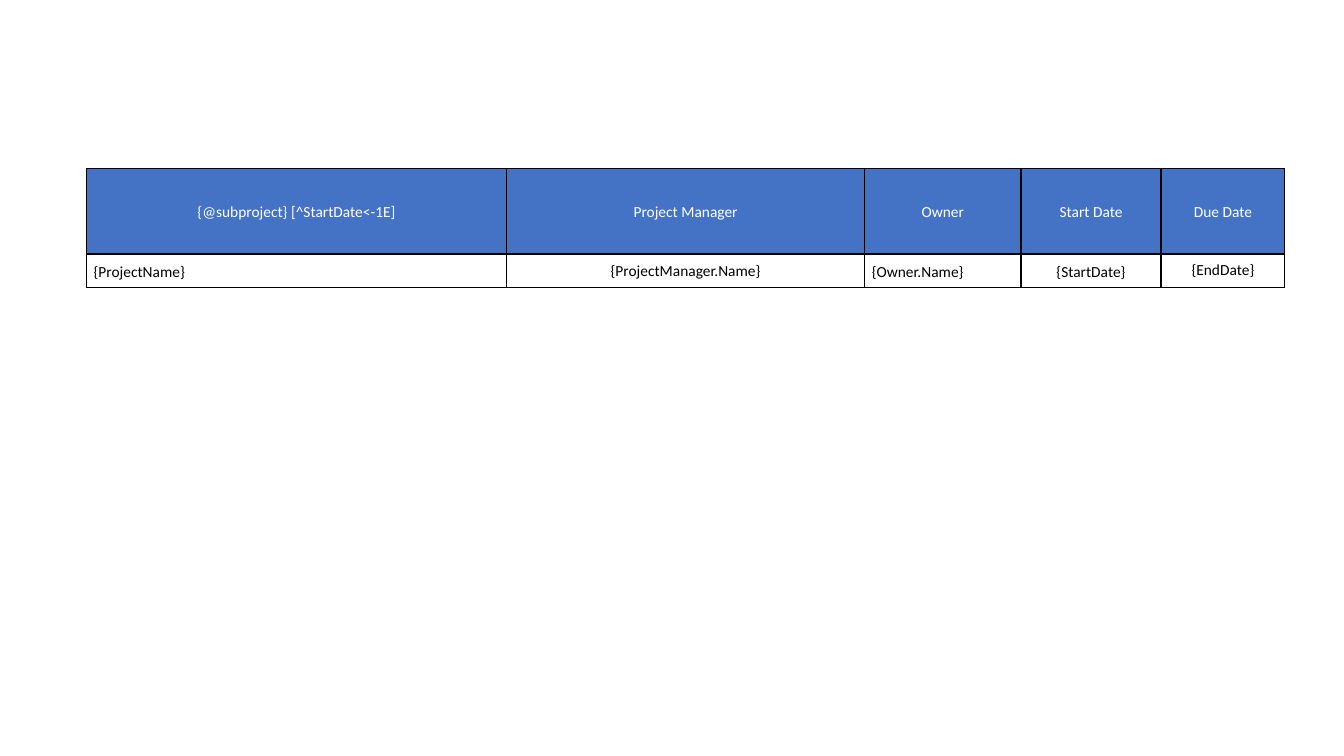
import pptx
import pptx.util
import pptx.dml.color
import pptx.enum.text
import pptx.oxml
import pptx.oxml.ns
from lxml import etree

Cm = pptx.util.Cm
Pt = pptx.util.Pt
RGB = pptx.dml.color.RGBColor
ALIGN = pptx.enum.text.PP_ALIGN
MIDDLE = pptx.enum.text.MSO_ANCHOR.MIDDLE

BLUE = RGB(0x44, 0x72, 0xC4)
WHITE = RGB(255, 255, 255)
BLACK = RGB(0, 0, 0)

LEFT, TOP = 2.18, 4.24
WIDTHS = [10.59, 9.02, 3.94, 3.53, 3.12]
HEIGHTS = [2.16, 0.84]
MID, START = ALIGN.CENTER, ALIGN.LEFT

ROWS = [
    [
        ("{@subproject} [^StartDate<-1E]", MID, 1.07, 0),
        ("Project Manager", MID, 1.15, 6),
        ("Owner", MID, 1.15, 6),
        ("Start Date", MID, 1.15, 6),
        ("Due Date", MID, 1.15, 6),
    ],
    [
        ("{ProjectName}", START, 1.15, 6),
        ("{ProjectManager.Name}", MID, 1.07, 0),
        ("{Owner.Name}", START, 1.15, 6),
        ("{StartDate}", MID, 1.15, 6),
        ("{EndDate}", MID, 1, 0),
    ],
]


def add_edges(cell):
    props = cell._tc.get_or_add_tcPr()
    for spot, side in enumerate(("lnL", "lnR", "lnT", "lnB")):
        edge = etree.Element(pptx.oxml.ns.qn("a:" + side), w=str(Pt(1)))
        fill = etree.SubElement(edge, pptx.oxml.ns.qn("a:solidFill"))
        etree.SubElement(fill, pptx.oxml.ns.qn("a:srgbClr"), val=str(BLACK))
        props.insert(spot, edge)


def fill_cell(cell, item, head):
    text, align, lines, gap = item
    cell.text_frame.text = text
    cell.vertical_anchor = MIDDLE
    cell.margin_left = cell.margin_right = Cm(0.18)
    cell.margin_top = cell.margin_bottom = 0
    if head:
        cell.fill.solid()
        cell.fill.fore_color.rgb = BLUE
    else:
        cell.fill.background()
    para = cell.text_frame.paragraphs[0]
    para.alignment = align
    para.line_spacing = lines
    para.space_before = para.space_after = Pt(gap)
    font = para.runs[0].font
    font.name = "Calibri"
    font.size = Pt(11)
    font.bold = False
    font.color.rgb = WHITE if head else BLACK
    add_edges(cell)


def main():
    deck = pptx.Presentation()
    deck.slide_width, deck.slide_height = Cm(33.87), Cm(19.05)
    slide = deck.slides.add_slide(deck.slide_layouts[6])
    table = slide.shapes.add_table(
        len(ROWS), len(WIDTHS), Cm(LEFT), Cm(TOP),
        Cm(sum(WIDTHS)), Cm(sum(HEIGHTS))).table
    table.first_row = table.horz_banding = False
    for col, width in zip(table.columns, WIDTHS):
        col.width = Cm(width)
    for row, height, items in zip(table.rows, HEIGHTS, ROWS):
        row.height = Cm(height)
        for cell, item in zip(row.cells, items):
            fill_cell(cell, item, items is ROWS[0])
    deck.save("out.pptx")


if __name__ == "__main__":
    main()
